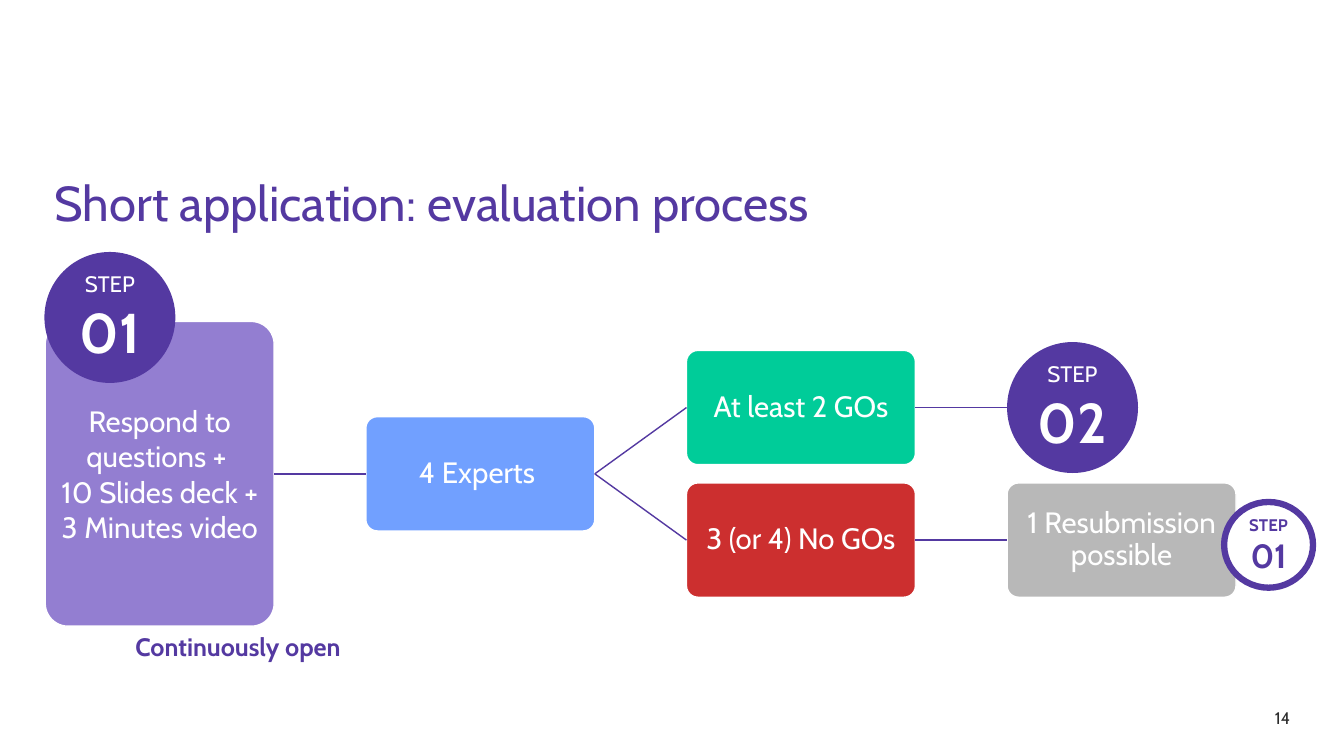
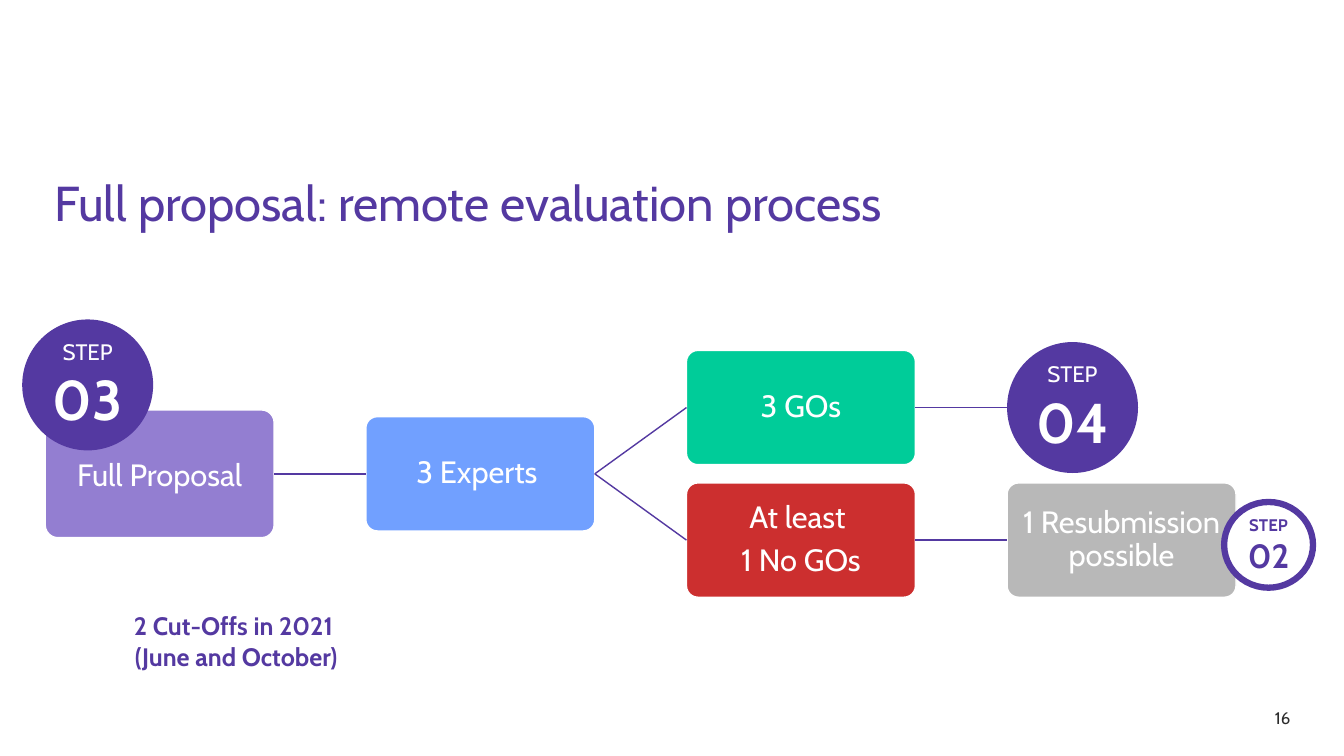
from lxml import etree
from pptx import Presentation
from pptx.dml.color import RGBColor
from pptx.enum import shapes as kinds, text as txt
from pptx.oxml import ns
from pptx.util import Cm, Pt

FONT = "Cabin"
HUES = {
    "main": "5439A1", "start": "937ED1", "expert": "71A0FF", "go": "00CC99",
    "stop": "CC2F2F", "retry": "B8B8B8", "white": "FFFFFF", "ink": "2C2C2C",
}
BOX_W, BOX_H = 5.77, 2.88   # flow box
PITCH = 8.08                # from one column to the next
FORK = 1.67                 # from the axis to either branch
DISC = 3.3
LEFT, AXIS = 1.14, 11.94


def hue(name):
    return RGBColor.from_string(HUES[name])


def write(shape, lines, tint, align=txt.PP_ALIGN.CENTER,
          anchor=txt.MSO_ANCHOR.MIDDLE, inset=None, lead=None, after=None):
    """Fill a shape with lines, each given as (words, size, bold)."""
    frame = shape.text_frame
    frame.word_wrap = True
    frame.auto_size = txt.MSO_AUTO_SIZE.NONE
    frame.vertical_anchor = anchor
    if inset is not None:
        frame.margin_left = frame.margin_right = Cm(inset)
        frame.margin_top = frame.margin_bottom = Cm(inset)
    for i, (words, size, bold) in enumerate(lines):
        para = frame.add_paragraph() if i else frame.paragraphs[0]
        para.alignment = align
        if lead:
            para.line_spacing = lead
        if after:
            para.space_after = Pt(after)
        run = para.add_run()
        run.text = words
        run.font.name = FONT
        run.font.size = Pt(size)
        run.font.bold = bold
        run.font.color.rgb = hue(tint)


def label(slide, x, y, w, h, lines, tint, **style):
    box = slide.shapes.add_textbox(Cm(x), Cm(y), Cm(w), Cm(h))
    write(box, lines, tint, **style)


def shape(slide, kind, x, y, w, h, fill, line=None, width=1):
    form = slide.shapes.add_shape(kind, Cm(x), Cm(y), Cm(w), Cm(h))
    form.shadow.inherit = False
    form.fill.solid()
    form.fill.fore_color.rgb = hue(fill)
    if line:
        form.line.color.rgb = hue(line)
        form.line.width = Pt(width)
    else:
        form.line.fill.background()
    return form


def card(slide, x, mid, lines, size, fill, h=BOX_H, lead=0.9, after=7.5):
    """Draw a rounded flow box centred on the height mid."""
    form = shape(slide, kinds.MSO_SHAPE.ROUNDED_RECTANGLE,
                 x, mid - h / 2, BOX_W, h, fill, "white")
    form.adjustments[0] = 0.1
    write(form, [(words, size, False) for words in lines], "white",
          inset=0.03, lead=lead, after=after)
    return form


def disc(slide, x, y, num):
    form = shape(slide, kinds.MSO_SHAPE.OVAL, x, y, DISC, DISC, "main")
    write(form, [("STEP", 16, False), (num, 40, True)], "white", inset=0)


def ring(slide, x, y, num):
    form = shape(slide, kinds.MSO_SHAPE.OVAL, x, y, 2.24, 2.16,
                 "white", "main", 4.5)
    write(form, [("STEP", 12, True), (num, 24, True)], "main", inset=0)


def link(slide, tail, head=None, reach=0):
    """Join two boxes, or run level from one box over the given reach."""
    x, y = tail.left + tail.width, tail.top + tail.height // 2
    line = slide.shapes.add_connector(
        kinds.MSO_CONNECTOR.STRAIGHT, x, y, x + Cm(reach), y)
    line.begin_connect(tail, 3)
    if head is not None:
        line.end_connect(head, 1)
    line.line.color.rgb = hue("main")
    line.line.width = Pt(1)
    etree.SubElement(line._element.spPr, ns.qn("a:effectLst"))


def flow(slide, x, mid, data):
    """Draw the chart from its left edge x and its middle height mid."""
    cols = [x + PITCH * i for i in range(4)]
    high, low = mid - FORK, mid + FORK
    size = data["size"]
    first = card(slide, cols[0], mid, data["start"], size, "start",
                 data["tall"], None, None)
    expert = card(slide, cols[1], mid, data["expert"], size, "expert")
    go = card(slide, cols[2], high, data["go"], size, "go")
    stop = card(slide, cols[2], low, data["stop"], size, "stop")
    retry = card(slide, cols[3], low, ["1 Resubmission possible"],
                 size, "retry")
    for tail, head in ((first, expert), (expert, go),
                       (expert, stop), (stop, retry)):
        link(slide, tail, head)
    link(slide, go, reach=PITCH - BOX_W)

    now, then, back = data["steps"]
    dx, dy = data["shift"]
    disc(slide, cols[3], high - DISC / 2, then)
    disc(slide, x + dx, mid - data["tall"] / 2 + dy, now)
    ring(slide, cols[3] + 5.47, low - 0.96, back)


def page(deck, data):
    slide = deck.slides.add_slide(deck.slide_layouts[5])
    head = slide.shapes.title
    head.left, head.top = Cm(1.12), Cm(4.4)
    head.width, head.height = Cm(30.68), Cm(3.68)
    write(head, [(data["title"], 35, False)], "main", txt.PP_ALIGN.LEFT,
          txt.MSO_ANCHOR.TOP, lead=0.9)
    flow(slide, LEFT, AXIS, data)
    label(slide, *data["spot"], [(words, 18, True) for words in data["note"]],
          "main")
    label(slide, 31.88, 17.7, 1.9, 1.02, [(data["page"], 12, False)], "ink",
          align=txt.PP_ALIGN.LEFT, anchor=txt.MSO_ANCHOR.TOP)


PAGES = [
    {
        "title": "Short application: evaluation process", "page": "14",
        "size": 21, "tall": 7.68,
        "start": ["Respond to questions + ",
                  "10 Slides deck + 3 Minutes video"],
        "expert": ["4 Experts "], "go": ["At least 2 GOs"],
        "stop": ["3 (or 4) No GOs"],
        "steps": ("01", "02", "01"), "shift": (-0.02, -1.75),
        "note": ["Continuously open"], "spot": (1.57, 15.72, 8.86, 1.12),
    },
    {
        "title": "Full proposal: remote evaluation process", "page": "16",
        "size": 22, "tall": 3.22,
        "start": ["Full Proposal"],
        "expert": ["3 Experts "], "go": ["3 GOs"],
        "stop": ["At least ", "1 No GOs"],
        "steps": ("03", "04", "02"), "shift": (-0.58, -2.28),
        "note": ["2 Cut-Offs in 2021 ", "(June and October)"],
        "spot": (2.82, 15.4, 6.27, 1.5),
    },
]


def main():
    deck = Presentation()
    deck.slide_width, deck.slide_height = Cm(33.87), Cm(19.05)
    for data in PAGES:
        page(deck, data)
    deck.save("out.pptx")


if __name__ == "__main__":
    main()
